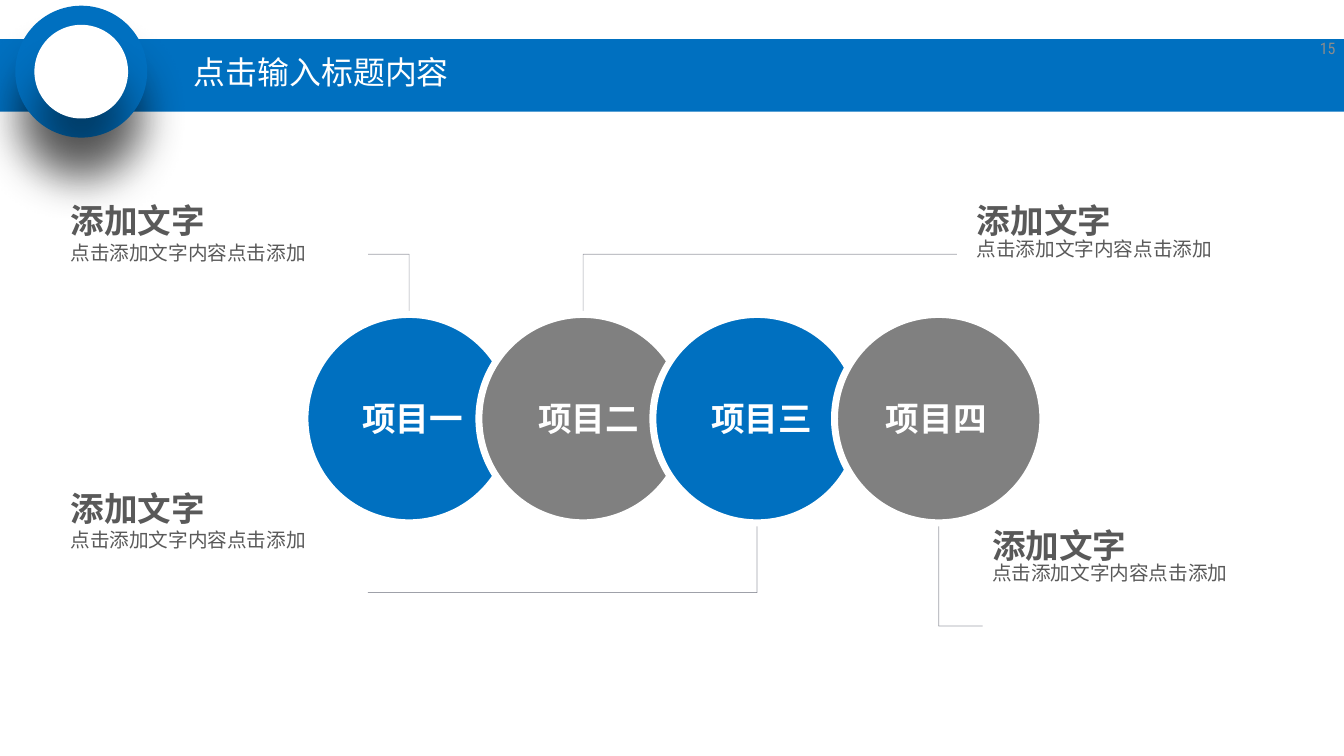
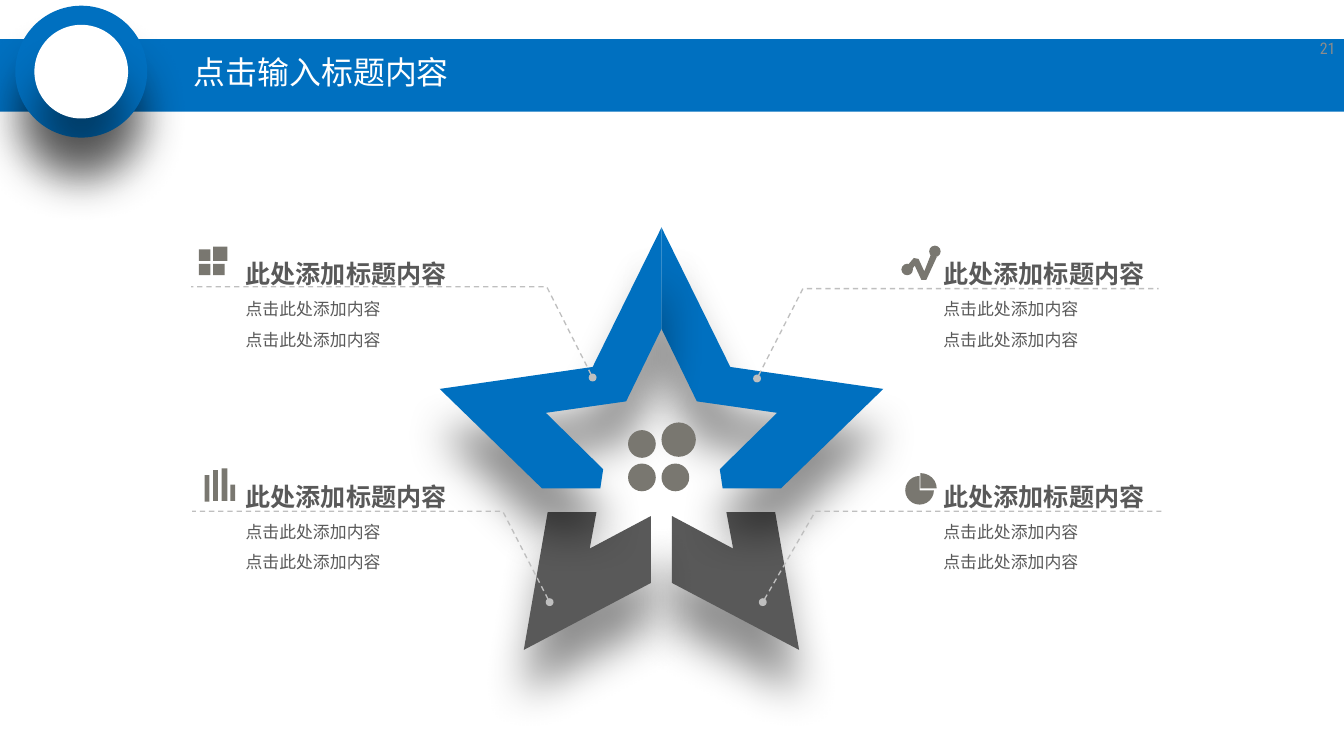
from dataclasses import dataclass

from pptx import Presentation
from pptx import util as u
from pptx.dml.color import RGBColor
from pptx.enum import dml, shapes, text
from pptx.oxml import parse_xml
from pptx.oxml.ns import nsdecls, qn

PX = 9144  # EMU in one px, 100 px to the inch


@dataclass(frozen=True)
class Theme:
    font: str = "Roboto Condensed"
    blue: str = "0070C0"
    gray: str = "808080"
    dark: str = "595959"
    icon: str = "797770"
    white: str = "FFFFFF"
    number: str = "8C8C8C"
    rule: str = "414455"
    leader: str = "BFBFBF"
    title_size: float = 24
    number_size: float = 12
    heading_size: float = 25.3
    body_size: float = 14.8
    callout_size: float = 18.9
    detail_size: float = 12.7


theme = Theme()
SHAPE = shapes.MSO_SHAPE
ALIGN = text.PP_ALIGN
SHADOW = (f'<a:outerShdw {nsdecls("a")} blurRad="419100" dist="419100" dir="5400000" '
          'algn="t" rotWithShape="0"><a:srgbClr val="000000"><a:alpha val="43000"/>'
          '</a:srgbClr></a:outerShdw>')


def paint(shape, color, shadow=False):
    """Give a shape a plain fill, no outline and, if asked, a soft shadow."""
    shape.fill.solid()
    shape.fill.fore_color.rgb = RGBColor.from_string(color)
    shape.line.fill.background()
    shape.shadow.inherit = False
    if shadow:
        shape.element.spPr.find(qn("a:effectLst")).append(parse_xml(SHADOW))
    return shape


def write(box, lines, anchor=text.MSO_ANCHOR.TOP, **paragraph_format):
    """Fill a box with paragraphs given as (words, size, color, bold)."""
    frame = box.text_frame
    frame.word_wrap = True
    frame.vertical_anchor = anchor
    for index, (words, size, color, bold) in enumerate(lines):
        para = frame.add_paragraph() if index else frame.paragraphs[0]
        for name, value in ({"alignment": ALIGN.LEFT} | paragraph_format).items():
            setattr(para, name, value)
        span = para.add_run()
        span.text = words
        for name, value in {"name": theme.font, "size": u.Pt(size), "bold": bold}.items():
            setattr(span.font, name, value)
        span.font.color.rgb = RGBColor.from_string(color)


deck = Presentation()
deck.slide_width, deck.slide_height = 1406 * PX, 791 * PX
layout = deck.slide_layouts[6]
for placeholder in list(layout.placeholders):
    layout.shapes.element.remove(placeholder.element)
pages = [deck.slides.add_slide(layout) for _ in range(2)]

# Shared header band and ring, moved to the layout
for kind, bounds, color, shadow in (
    (SHAPE.RECTANGLE, (0, 41, 1406, 76), theme.blue, False),
    (SHAPE.OVAL, (16, 6, 138, 138), theme.blue, True),
    (SHAPE.OVAL, (36, 26, 98, 98), theme.white, True),
):
    part = pages[0].shapes.add_shape(kind, *(v * PX for v in bounds))
    layout.shapes.element.append(paint(part, color, shadow).element)

# Title and page number
for page, number in zip(pages, ("15", "21")):
    box = page.shapes.add_textbox(193 * PX, 50 * PX, 347 * PX, 55 * PX)
    write(box, [("点击输入标题内容", theme.title_size, theme.white, False)],
          text.MSO_ANCHOR.MIDDLE, line_spacing=0.9)
    box = page.shapes.add_textbox(1338 * PX, 29 * PX, 69 * PX, 42 * PX)
    write(box, [(number, theme.number_size, theme.number, False)],
          text.MSO_ANCHOR.MIDDLE, alignment=ALIGN.RIGHT)

# Slide 1: four notes
page = pages[0]
for left, heading_top, body_top in ((64, 187, 247), (64, 489, 547),
                                    (1012, 187, 243), (1028, 527, 582)):
    box = page.shapes.add_textbox(left * PX, heading_top * PX, 321 * PX, 45 * PX)
    write(box, [("添加文字", theme.heading_size, theme.dark, True)], line_spacing=1.4)
    box = page.shapes.add_textbox(left * PX, body_top * PX, 321 * PX, 146 * PX)
    write(box, [("点击添加文字内容点击添加", theme.body_size, theme.dark, False)])

# Slide 1: elbow rules from the circles to the notes
for x, start, bend, end in ((428, 329, 266, 385), (610, 329, 266, 1001),
                            (792, 547, 620, 385), (982, 547, 655, 1028)):
    for points in ((x, start, x, bend), (x, bend, end, bend)):
        rule = page.shapes.add_connector(shapes.MSO_CONNECTOR.STRAIGHT,
                                         *(v * PX for v in points))
        rule.line.width = u.Pt(0.5)
        rule.line.color.rgb = RGBColor.from_string(theme.rule)
        properties = rule.element.spPr
        properties.find(".//" + qn("a:srgbClr")).append(
            parse_xml(f'<a:alpha {nsdecls("a")} val="50000"/>'))
        properties.append(parse_xml(f'<a:effectLst {nsdecls("a")}/>'))

# Slide 1: overlapping circles with their labels
for left, label_left, words, color in (
    (319, 369, "项目一", theme.blue), (501, 553, "项目二", theme.gray),
    (683, 734, "项目三", theme.blue), (873, 917, "项目四", theme.gray),
):
    circle = page.shapes.add_shape(SHAPE.OVAL, left * PX, 329 * PX, 218 * PX, 218 * PX)
    paint(circle, color)
    circle.line.color.rgb = RGBColor.from_string(theme.white)
    circle.line.width = u.Pt(5.25)
    label = page.shapes.add_shape(SHAPE.RECTANGLE, label_left * PX, 411 * PX,
                                  141 * PX, 65 * PX)
    write(paint(label, color), [(words, theme.heading_size, theme.white, True)])

# Slide 2: star halves, mirrored about its axis
page = pages[1]
AXIS = 692
leg = [(703, 540), (703, 610), (836, 680), (811, 536), (760, 536), (767, 574)]
arm = [(764, 384), (692, 238), (692, 344), (729, 420), (813, 432),
       (753, 491), (756, 511), (817, 511), (924, 407)]
for outline, color in ((leg, theme.dark), (arm, theme.blue)):
    for points in (outline, [(2 * AXIS - x, y) for x, y in outline]):
        builder = page.shapes.build_freeform(*points[0], scale=PX)
        builder.add_line_segments(points[1:], close=True)
        paint(builder.convert_to_shape(), color, shadow=True)

# Slide 2: callout texts
for left in (977, 247):
    for top in (250, 483):
        box = page.shapes.add_textbox(left * PX, top * PX, 265 * PX, 170 * PX)
        detail = ("点击此处添加内容", theme.detail_size, theme.dark, False)
        write(box, [("此处添加标题内容", theme.callout_size, theme.dark, True), detail, detail],
              alignment=ALIGN.JUSTIFY, line_spacing=1.5)

# Slide 2: icons made of dots, tiles, bars and pie pieces
for kind, bounds in (
    (SHAPE.OVAL, ((657, 450, 29, 29), (692, 442, 36, 36),
                  (657, 485, 29, 29), (692, 485, 29, 29),
                  (972, 257, 12, 12), (943, 276, 12, 12))),
    (SHAPE.RECTANGLE, ((208, 261, 12, 12), (223, 258, 15, 15),
                       (208, 276, 12, 12), (223, 276, 12, 12),
                       (214, 497, 5, 28), (223, 492, 5, 32),
                       (232, 490, 6, 34), (241, 507, 5, 17))),
    (SHAPE.PIE, ((947, 498, 30, 30), (946, 495, 34, 32))),
):
    for bound in bounds:
        piece = paint(page.shapes.add_shape(kind, *(v * PX for v in bound)), theme.icon)
# The last piece is the loose quarter, from twelve to three o'clock
piece.adjustments[0], piece.adjustments[1] = 162, 0

# Slide 2: zigzag between the two trend dots
zigzag = [(950, 277), (956, 270), (961, 271), (967, 284), (974, 266),
          (980, 269), (969, 293), (964, 293), (957, 278), (954, 282)]
builder = page.shapes.build_freeform(*zigzag[0], scale=PX)
builder.add_line_segments(zigzag[1:], close=True)
paint(builder.convert_to_shape(), theme.icon)

# Slide 2: dashed leaders with a dot on the star
for points in (
    [(620, 395), (572, 300), (200, 300)], [(575, 630), (526, 535), (201, 535)],
    [(792, 396), (840, 302), (1212, 302)], [(798, 630), (853, 535), (1215, 535)],
):
    builder = page.shapes.build_freeform(*points[0], scale=PX)
    builder.add_line_segments(points[1:], close=False)
    leader = builder.convert_to_shape()
    leader.fill.background()
    leader.shadow.inherit = False
    leader.line.color.rgb = RGBColor.from_string(theme.leader)
    for name, value in {"width": u.Pt(1), "dash_style": dml.MSO_LINE.DASH}.items():
        setattr(leader.line, name, value)
    leader.element.spPr.find(qn("a:ln")).append(
        parse_xml(f'<a:headEnd {nsdecls("a")} type="oval"/>'))

deck.save("out.pptx")
